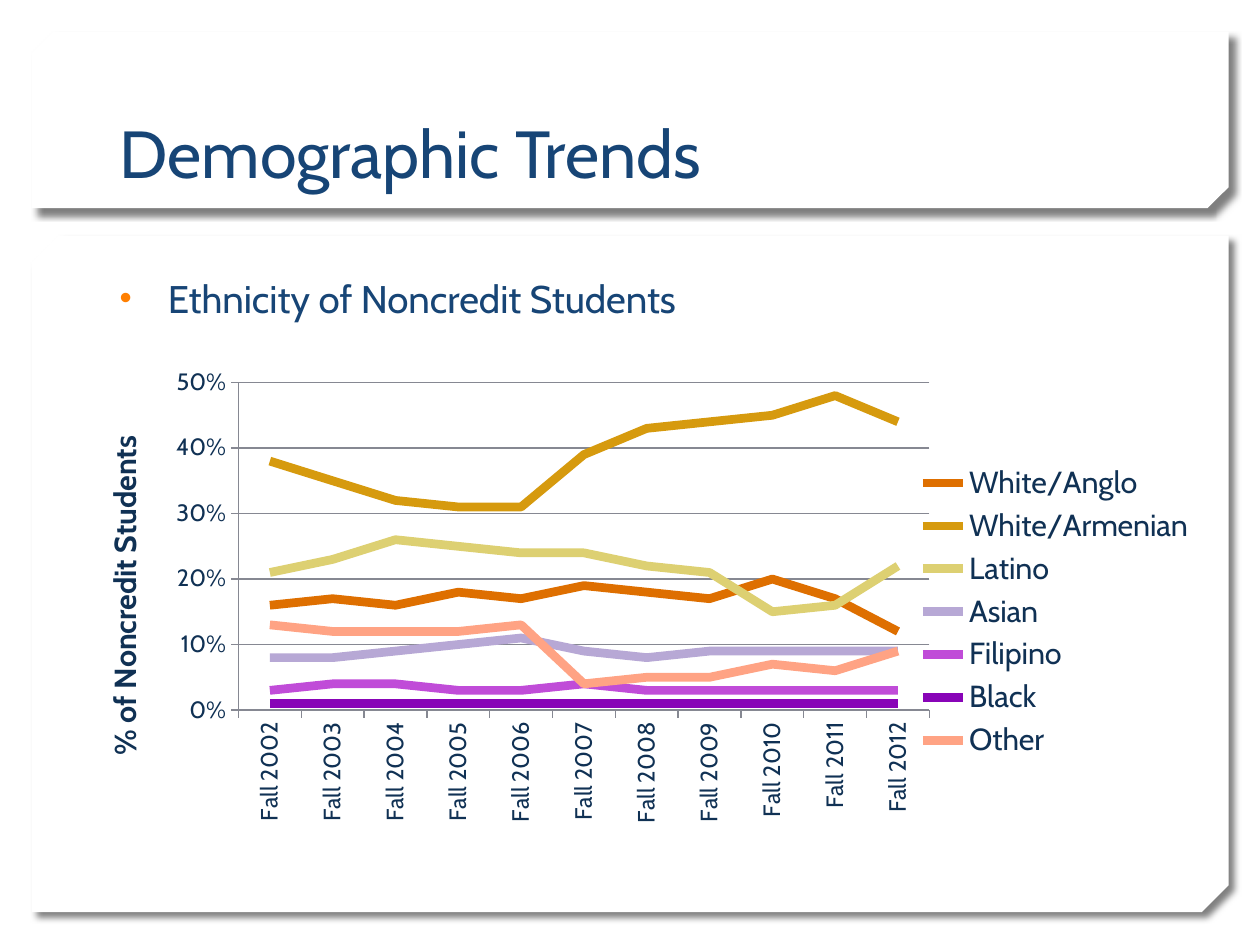
from lxml import etree
from pptx import Presentation
from pptx.chart.data import CategoryChartData
from pptx.dml.color import RGBColor
from pptx.enum.chart import XL_CHART_TYPE, XL_LEGEND_POSITION, XL_TICK_MARK
from pptx.enum.shapes import MSO_SHAPE
from pptx.enum.text import MSO_ANCHOR, MSO_AUTO_SIZE, PP_ALIGN
from pptx.oxml import parse_xml
from pptx.oxml.ns import nsdecls, qn
from pptx.util import Cm, Pt

LINE_CHART = XL_CHART_TYPE.LINE
LEGEND_RIGHT = XL_LEGEND_POSITION.RIGHT
TICK_OUTSIDE = XL_TICK_MARK.OUTSIDE
SNIPPED = MSO_SHAPE.SNIP_2_DIAG_RECTANGLE
BOTTOM = MSO_ANCHOR.BOTTOM
TOP = MSO_ANCHOR.TOP
NO_FIT = MSO_AUTO_SIZE.NONE
LEFT = PP_ALIGN.LEFT

WHITE = RGBColor(0xFF, 0xFF, 0xFF)
BLUE = RGBColor(0x17, 0x45, 0x76)
NAVY = RGBColor(0x10, 0x31, 0x54)
GRAY = RGBColor(0x86, 0x88, 0x92)
FONT = "Cabin"

SERIES = [
    ("White/Anglo", RGBColor(0xDE, 0x6F, 0x00), [16, 17, 16, 18, 17, 19, 18, 17, 20, 17, 12]),
    ("White/Armenian", RGBColor(0xD6, 0x9A, 0x0E), [38, 35, 32, 31, 31, 39, 43, 44, 45, 48, 44]),
    ("Latino", RGBColor(0xDD, 0xD0, 0x72), [21, 23, 26, 25, 24, 24, 22, 21, 15, 16, 22]),
    ("Asian", RGBColor(0xB7, 0xA8, 0xD5), [8, 8, 9, 10, 11, 9, 8, 9, 9, 9, 9]),
    ("Filipino", RGBColor(0xC0, 0x4C, 0xD8), [3, 4, 4, 3, 3, 4, 3, 3, 3, 3, 3]),
    ("Black", RGBColor(0x88, 0x04, 0xB7), [1] * 11),
    ("Other", RGBColor(0xFF, 0xA3, 0x84), [13, 12, 12, 12, 13, 4, 5, 5, 7, 6, 9]),
]


def write_text(shape, text, size, anchor, space_before=0):
    frame = shape.text_frame
    frame.auto_size = NO_FIT
    frame.word_wrap = True
    frame.vertical_anchor = anchor
    para = frame.paragraphs[0]
    para.alignment = LEFT
    para.space_before = Pt(space_before)
    span = para.add_run()
    span.text = text
    span.font.name = FONT
    span.font.size = Pt(size)
    span.font.color.rgb = BLUE
    return para


deck = Presentation()
deck.slide_width = Cm(25.4)
deck.slide_height = Cm(19.05)
page = deck.slides.add_slide(deck.slide_layouts[1])
page.background.fill.solid()
page.background.fill.fore_color.rgb = WHITE

for layer, (top, height, snip) in enumerate([(4.75, 13.64, 0.04), (0.64, 3.56, 0.12)]):
    panel = page.shapes.add_shape(SNIPPED, Cm(0.64), Cm(top), Cm(24.13), Cm(height))
    panel.adjustments[0] = 0
    panel.adjustments[1] = snip
    panel.fill.solid()
    panel.fill.fore_color.rgb = WHITE
    panel.line.fill.background()
    panel.shadow.inherit = False
    panel.element.spPr.find(qn("a:xfrm")).set("flipV", "1")
    panel.element.spPr.find(qn("a:effectLst")).append(parse_xml(
        f'<a:outerShdw {nsdecls("a")} blurRad="50800" dist="63500" dir="2700000" '
        'algn="tl" rotWithShape="0"><a:srgbClr val="000000"><a:alpha val="50000"/>'
        '</a:srgbClr></a:outerShdw>'))
    page.shapes.element.insert(2 + layer, panel.element)

title = page.shapes.title
title.left, title.top, title.width, title.height = Cm(2.16), Cm(0.81), Cm(21.06), Cm(3.18)
write_text(title, "Demographic Trends", 38, BOTTOM)

body = page.placeholders[1]
body.left, body.top, body.width, body.height = Cm(2.16), Cm(5.41), Cm(21.06), Cm(11.13)
bullet = write_text(body, "Ethnicity of Noncredit Students", 22, TOP, space_before=20)
bullet_format = bullet._p.get_or_add_pPr()
bullet_format.set("marL", str(Cm(0.97)))
bullet_format.set("indent", str(-Cm(0.97)))
bullet_color = etree.SubElement(bullet_format, qn("a:buClr"))
etree.SubElement(bullet_color, qn("a:srgbClr"), val="FF7F01")
etree.SubElement(bullet_format, qn("a:buSzPct"), val="90000")
etree.SubElement(bullet_format, qn("a:buFont"), typeface="Arial")
etree.SubElement(bullet_format, qn("a:buChar"), char="•")

data = CategoryChartData(number_format="0%")
data.categories = [f"Fall {year}" for year in range(2002, 2013)]
for name, color, percents in SERIES:
    data.add_series(name, [percent / 100 for percent in percents])
chart = page.shapes.add_chart(
    LINE_CHART, Cm(1.22), Cm(7.21), Cm(23.14), Cm(10.24), data).chart
chart.has_title = False
chart.font.name = FONT
chart.font.size = Pt(17.4)
chart.font.color.rgb = NAVY
chart.has_legend = True
chart.legend.position = LEGEND_RIGHT
chart.legend.include_in_layout = False

plot = chart.plots[0]
plot.vary_by_categories = False
for series, (name, color, percents) in zip(plot.series, SERIES):
    series.smooth = False
    series.format.line.width = Pt(5)
    series.format.line.color.rgb = color

for axis in (chart.category_axis, chart.value_axis):
    axis.major_tick_mark = TICK_OUTSIDE
    axis.tick_labels.font.size = Pt(13.5)
    axis.format.line.color.rgb = GRAY
labels = chart.category_axis._element.find(qn("c:txPr")).find(qn("a:bodyPr"))
labels.set("rot", "-5400000")
labels.set("vert", "horz")

values = chart.value_axis
values.minimum_scale = 0
values.maximum_scale = 0.5
values.major_unit = 0.1
values.tick_labels.number_format = "0%"
values.tick_labels.number_format_is_linked = False
values.has_major_gridlines = True
values.major_gridlines.format.line.color.rgb = GRAY
caption = values.axis_title.text_frame
caption.text = "% of Noncredit Students"
caption_font = caption.paragraphs[0].runs[0].font
caption_font.name = FONT
caption_font.size = Pt(17.4)
caption_font.bold = True
caption_font.color.rgb = NAVY

plot_area = chart._chartSpace.chart.plotArea
for old_layout in plot_area.findall(qn("c:layout")):
    plot_area.remove(old_layout)
layout = etree.Element(qn("c:layout"))
manual = etree.SubElement(layout, qn("c:manualLayout"))
for tag, value in [("layoutTarget", "inner"), ("xMode", "edge"), ("yMode", "edge"),
                   ("x", "0.155"), ("y", "0.049"), ("w", "0.602"), ("h", "0.645")]:
    etree.SubElement(manual, qn(f"c:{tag}"), val=value)
plot_area.insert(0, layout)

deck.save("out.pptx")
